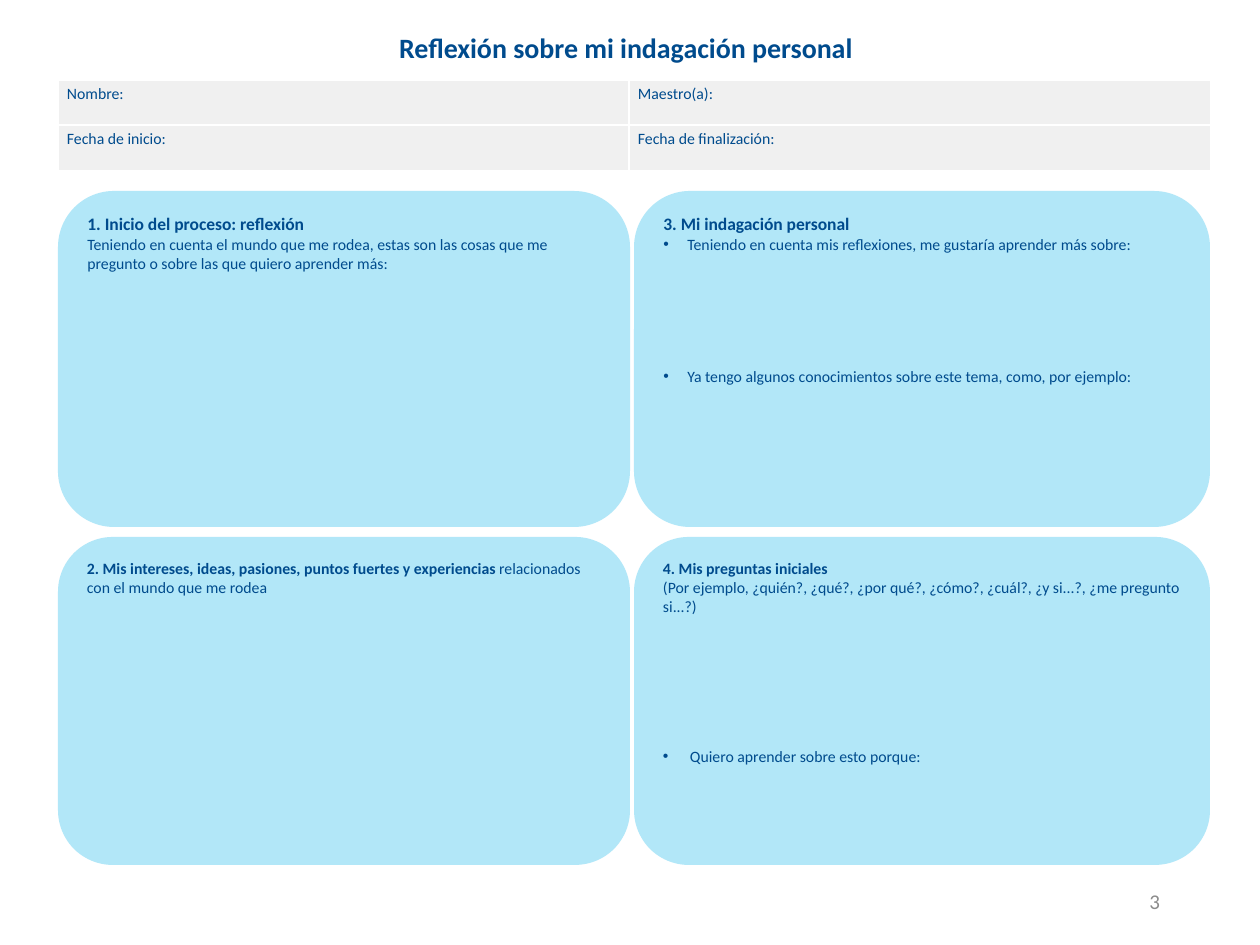
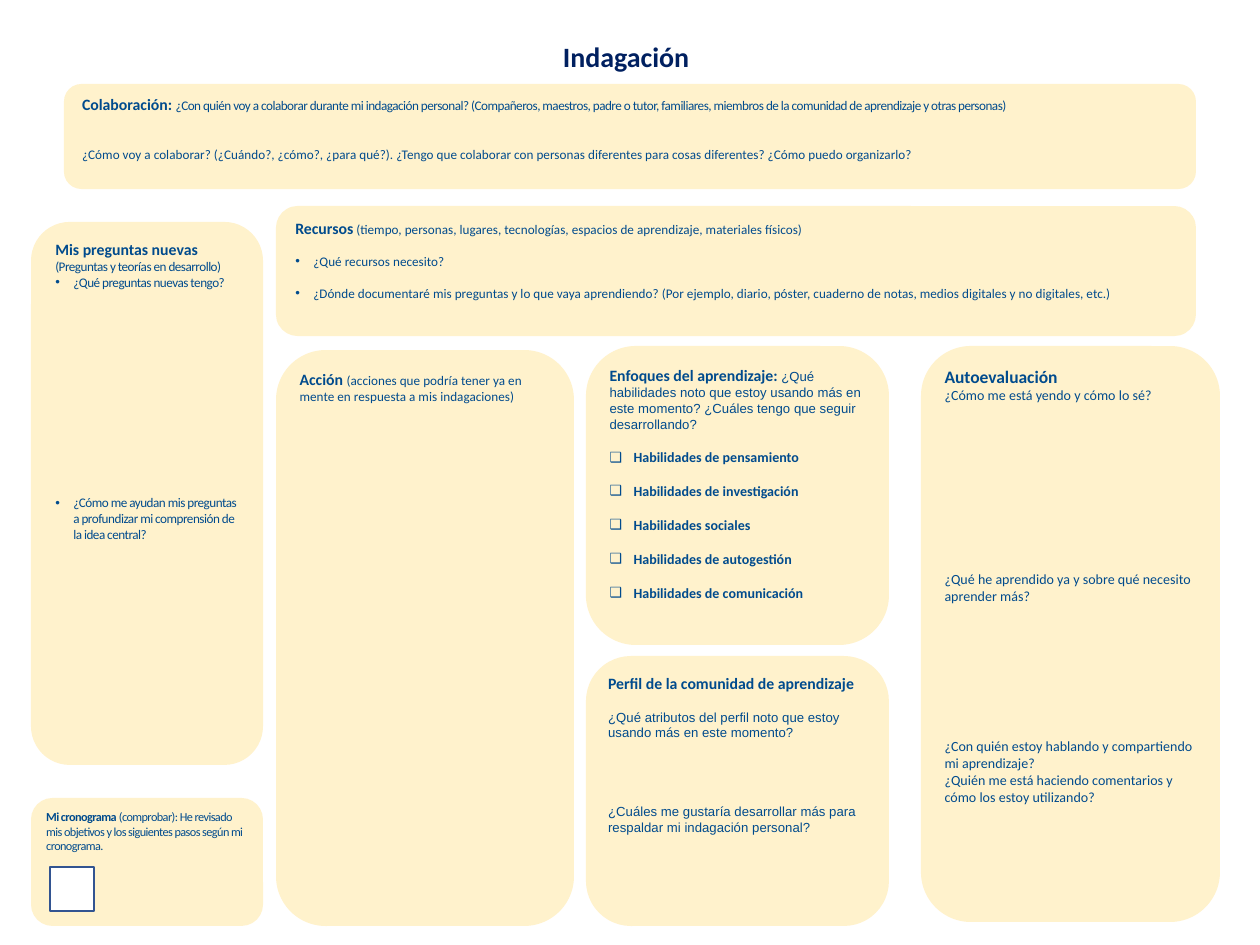
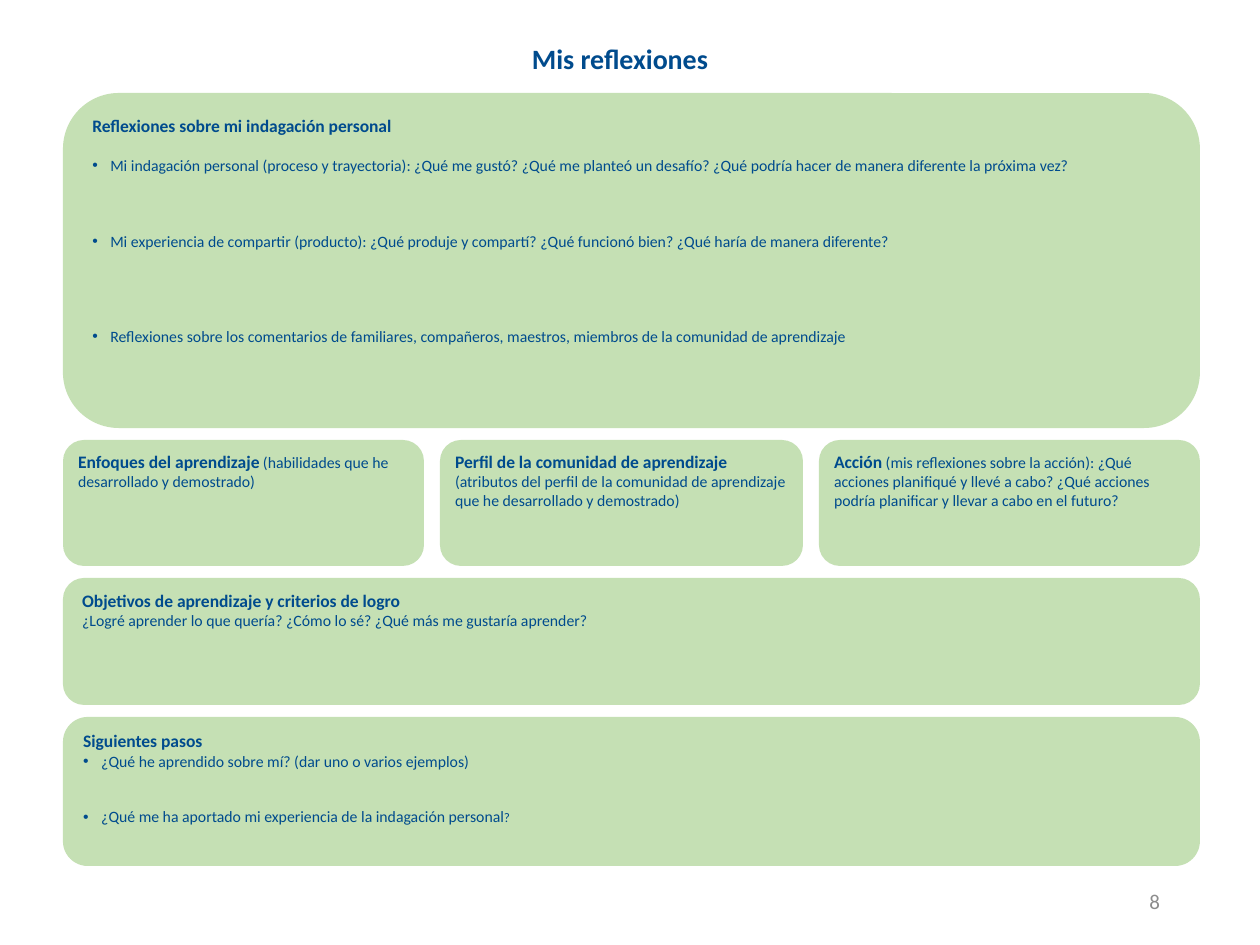
from lxml import etree
from pptx import Presentation
from pptx.dml.color import RGBColor
from pptx.enum.shapes import MSO_SHAPE
from pptx.enum.text import MSO_ANCHOR, PP_ALIGN
from pptx.oxml.ns import qn
from pptx.util import Emu, Pt

ROUNDED, SQUARE = MSO_SHAPE.ROUNDED_RECTANGLE, MSO_SHAPE.RECTANGLE
TOP, MIDDLE = MSO_ANCHOR.TOP, MSO_ANCHOR.MIDDLE
LEFT, CENTER, RIGHT = PP_ALIGN.LEFT, PP_ALIGN.CENTER, PP_ALIGN.RIGHT

BLUE = RGBColor(0x00, 0x4B, 0x8D)
NAVY = RGBColor(0x00, 0x20, 0x60)
SKY = RGBColor(0xB2, 0xE7, 0xF8)
CREAM = RGBColor(0xFF, 0xF2, 0xCC)
GREEN = RGBColor(0xC5, 0xE0, 0xB4)
PALE_GRAY = RGBColor(0xF0, 0xF0, 0xF0)
GRAY = RGBColor(0x8C, 0x8C, 0x8C)
WHITE = RGBColor(0xFF, 0xFF, 0xFF)
CHECK_LINE = RGBColor(0x32, 0x54, 0x91)

PX = 914400 / 126
WIDE = (13, 6)
NARROW = (9, 5)
DOT, CHECK = "•", "❑"
TIGHT = -0.3


def px(n):
    return Emu(round(n * PX))


def add_text(tf, text, join=False, size=9, bold=False, color=BLUE, font="Calibri",
             spacing=0, gap=0, bullet=None, indent=18, align=LEFT):
    if join or not tf.text:
        p = tf.paragraphs[-1]
    else:
        p = tf.add_paragraph()
    if not join:
        p.alignment = align
        p.space_before = px(gap)
        if bullet:
            pPr = p._p.get_or_add_pPr()
            pPr.set("marL", str(px(indent)))
            pPr.set("indent", str(-px(indent)))
            etree.SubElement(pPr, qn("a:buFont")).set("typeface", "Arial")
            etree.SubElement(pPr, qn("a:buChar")).set("char", bullet)
    r = p.add_run()
    r.text = text
    r.font.size = Pt(size)
    r.font.bold = bold
    r.font.name = font
    r.font.color.rgb = color
    if spacing:
        r._r.get_or_add_rPr().set("spc", str(round(spacing * 100)))


def set_frame(tf, inset=WIDE, anchor=TOP):
    tf.word_wrap = True
    tf.vertical_anchor = anchor
    tf.margin_left = tf.margin_right = px(inset[0])
    tf.margin_top = tf.margin_bottom = px(inset[1])
    return tf


def add_box(slide, box, fill, kind=ROUNDED, line=None):
    sp = slide.shapes.add_shape(kind, *map(px, box))
    sp.shadow.inherit = False
    sp.fill.solid()
    sp.fill.fore_color.rgb = fill
    if line:
        sp.line.color.rgb = line
        sp.line.width = Pt(1)
    else:
        sp.line.fill.background()
    return sp


def panel(slide, box, fill, heading, size=10, inset=WIDE, spacing=0):
    tf = set_frame(add_box(slide, box, fill).text_frame, inset)
    add_text(tf, heading, size=size, bold=True, spacing=spacing)
    return tf


def label(slide, box, text, anchor=TOP, **fmt):
    sp = slide.shapes.add_textbox(*map(px, box))
    add_text(set_frame(sp.text_frame, anchor=anchor), text, **fmt)


def title(slide, text, top, width=1252, color=BLUE):
    label(slide, (0, top, width, 47), text, size=16, bold=True, color=color, align=CENTER)


def page_number(slide, number):
    label(slide, (890, 876, 283, 50), number, MIDDLE, size=12, color=GRAY, align=RIGHT)


def tracks(start, sizes, gap):
    return [(start + sum(sizes[:i]) + gap * i, size) for i, size in enumerate(sizes)]


def white_borders(cell):
    tcPr = cell._tc.get_or_add_tcPr()
    for i, side in enumerate(("lnL", "lnR", "lnT", "lnB")):
        ln = etree.Element(qn(f"a:{side}"), w=str(Pt(1)))
        solid = etree.SubElement(ln, qn("a:solidFill"))
        etree.SubElement(solid, qn("a:srgbClr")).set("val", str(WHITE))
        tcPr.insert(i, ln)


def student_table(slide, left, top):
    rows = [("Nombre:", "Maestro(a):"), ("Fecha de inicio:", "Fecha de finalización:")]
    widths, heights = (571, 582), (45, 46)
    table = slide.shapes.add_table(2, 2, px(left), px(top), px(sum(widths)),
                                   px(sum(heights))).table
    table.first_row = table.horz_banding = False
    for i in range(2):
        table.columns[i].width = px(widths[i])
        table.rows[i].height = px(heights[i])
    for i, row in enumerate(rows):
        for j, text in enumerate(row):
            cell = table.cell(i, j)
            cell.fill.solid()
            cell.fill.fore_color.rgb = PALE_GRAY
            cell.margin_left = cell.margin_right = px(NARROW[0])
            cell.margin_top = cell.margin_bottom = px(NARROW[1])
            add_text(cell.text_frame, text)
            white_borders(cell)


def starting_slide(slide):
    page_number(slide, "3")
    title(slide, "Reflexión sobre mi indagación personal", 25)
    student_table(slide, 58, 80)
    columns = tracks(58, (572, 576), 4)
    rows = tracks(191, (336, 328), 10)
    start, inquiry, interests, questions = [(x, y, w, h) for y, h in rows for x, w in columns]

    tf = panel(slide, start, SKY, "1. Inicio del proceso: reflexión")
    add_text(tf, "Teniendo en cuenta el mundo que me rodea, estas son las cosas que me "
                 "pregunto o sobre las que quiero aprender más:")

    tf = panel(slide, interests, SKY,
               "2. Mis intereses, ideas, pasiones, puntos fuertes y experiencias", 9)
    add_text(tf, " relacionados con el mundo que me rodea", join=True)

    tf = panel(slide, inquiry, SKY, "3. Mi indagación personal")
    add_text(tf, "Teniendo en cuenta mis reflexiones, me gustaría aprender más sobre:",
             bullet=DOT, indent=24)
    add_text(tf, "Ya tengo algunos conocimientos sobre este tema, como, por ejemplo:",
             bullet=DOT, indent=24, gap=113)

    tf = panel(slide, questions, SKY, "4. Mis preguntas iniciales", 9)
    add_text(tf, "(Por ejemplo, ¿quién?, ¿qué?, ¿por qué?, ¿cómo?, ¿cuál?, ¿y si...?, "
                 "¿me pregunto si...?)")
    add_text(tf, "Quiero aprender sobre esto porque:", bullet=DOT, indent=27, gap=131)


def collaboration(slide, box):
    tf = panel(slide, box, CREAM, "Colaboración: ", 9)
    add_text(tf, "¿Con quién voy a colaborar durante mi indagación personal? (Compañeros, "
                 "maestros, padre o tutor, familiares, miembros de la comunidad de "
                 "aprendizaje y otras personas)", join=True, size=7.5, spacing=TIGHT)
    add_text(tf, "¿Cómo voy a colaborar? (¿Cuándo?, ¿cómo?, ¿para qué?). ¿Tengo que "
                 "colaborar con personas diferentes para cosas diferentes? ¿Cómo puedo "
                 "organizarlo?", size=7.5, gap=32)


def new_questions(slide, box):
    tf = panel(slide, box, CREAM, "Mis preguntas nuevas", 9)
    fmt = dict(size=7.5, spacing=TIGHT)
    add_text(tf, "(Preguntas y teorías en desarrollo)", **fmt)
    add_text(tf, "¿Qué preguntas nuevas tengo?", bullet=DOT, **fmt)
    add_text(tf, "¿Cómo me ayudan mis preguntas a profundizar mi comprensión de la idea "
                 "central?", bullet=DOT, gap=205, **fmt)


def resources(slide, box):
    tf = panel(slide, box, CREAM, "Recursos", 9)
    add_text(tf, " (tiempo, personas, lugares, tecnologías, espacios de aprendizaje, "
                 "materiales físicos)", join=True, size=7.5)
    for text in ("¿Qué recursos necesito?",
                 "¿Dónde documentaré mis preguntas y lo que vaya aprendiendo? (Por ejemplo, "
                 "diario, póster, cuaderno de notas, medios digitales y no digitales, etc.)"):
        add_text(tf, text, size=7.5, bullet=DOT, gap=16)


def schedule(slide, box):
    tf = panel(slide, box, CREAM, "Mi cronograma", 7, NARROW, TIGHT)
    add_text(tf, " (comprobar): He revisado mis objetivos y los siguientes pasos según mi "
                 "cronograma.", join=True, size=7, spacing=TIGHT)
    x, y = box[:2]
    add_box(slide, (x + 19, y + 69, 44, 44), WHITE, SQUARE, CHECK_LINE)


def action(slide, box):
    tf = panel(slide, box, CREAM, "Acción ", 9, NARROW)
    add_text(tf, "(acciones que podría tener ya en mente en respuesta a mis indagaciones)",
             join=True, size=7.5)


def skills(slide, box):
    tf = panel(slide, box, CREAM, "Enfoques del aprendizaje: ", 9, NARROW)
    add_text(tf, "¿Qué habilidades noto que estoy usando más en este momento? ¿Cuáles "
                 "tengo que seguir desarrollando?", join=True, size=7.5, font="Arial")
    for skill in ("de pensamiento", "de investigación", "sociales", "de autogestión",
                  "de comunicación"):
        add_text(tf, f"Habilidades {skill}", size=8, bold=True, bullet=CHECK, indent=24,
                 gap=17)


def profile(slide, box):
    tf = panel(slide, box, CREAM, "Perfil de la comunidad de aprendizaje", 9, NARROW)
    add_text(tf, "¿Qué atributos del perfil noto que estoy usando más en este momento?",
             size=7.5, font="Arial", gap=16)
    add_text(tf, "¿Cuáles me gustaría desarrollar más para respaldar mi indagación personal?",
             size=7.5, font="Arial", gap=63)


def self_assessment(slide, box):
    tf = panel(slide, box, CREAM, "Autoevaluación", 10, NARROW)
    for text, gap in (("¿Cómo me está yendo y cómo lo sé?", 0),
                      ("¿Qué he aprendido ya y sobre qué necesito aprender más?", 167),
                      ("¿Con quién estoy hablando y compartiendo mi aprendizaje?", 134),
                      ("¿Quién me está haciendo comentarios y cómo los estoy utilizando?", 0)):
        add_text(tf, text, size=8, gap=gap)


def inquiry_slide(slide):
    title(slide, "Indagación", 34, color=NAVY)
    collaboration(slide, (64, 84, 1132, 105))
    new_questions(slide, (31, 222, 232, 543))
    resources(slide, (276, 206, 920, 130))
    schedule(slide, (31, 798, 232, 128))
    action(slide, (276, 350, 298, 576))
    skills(slide, (586, 346, 303, 299))
    profile(slide, (586, 656, 303, 270))
    self_assessment(slide, (921, 346, 299, 576))


def reflections_slide(slide):
    page_number(slide, "8")
    title(slide, "Mis reflexiones", 36, width=1240)
    left, width = 63, 1137
    inquiry, summary, goals, steps = tracks(93, (335, 126, 127, 149), 12)

    tf = panel(slide, (left, inquiry[0], width, inquiry[1]), GREEN,
               "Reflexiones sobre mi indagación personal")
    for text, gap in (("Mi indagación personal (proceso y trayectoria): ¿Qué me gustó? ¿Qué me "
                       "planteó un desafío? ¿Qué podría hacer de manera diferente la próxima "
                       "vez?", 19),
                      ("Mi experiencia de compartir (producto): ¿Qué produje y compartí? ¿Qué "
                       "funcionó bien? ¿Qué haría de manera diferente?", 57),
                      ("Reflexiones sobre los comentarios de familiares, compañeros, maestros, "
                       "miembros de la comunidad de aprendizaje", 76)):
        add_text(tf, text, bullet=DOT, gap=gap)

    topics = (("Enfoques del aprendizaje", " (habilidades que he desarrollado y demostrado)"),
              ("Perfil de la comunidad de aprendizaje",
               " (atributos del perfil de la comunidad de aprendizaje que he desarrollado y "
               "demostrado)"),
              ("Acción", " (mis reflexiones sobre la acción): ¿Qué acciones planifiqué y llevé "
                         "a cabo? ¿Qué acciones podría planificar y llevar a cabo en el futuro?"))
    for (x, w), (heading, text) in zip(tracks(left, (361, 363, 381), 16), topics):
        tf = panel(slide, (x, summary[0], w, summary[1]), GREEN, heading, inset=NARROW)
        add_text(tf, text, join=True)

    tf = panel(slide, (left, goals[0], width, goals[1]), GREEN,
               "Objetivos de aprendizaje y criterios de logro")
    add_text(tf, "¿Logré aprender lo que quería? ¿Cómo lo sé? ¿Qué más me gustaría aprender?")

    tf = panel(slide, (left, steps[0], width, steps[1]), GREEN, "Siguientes pasos")
    add_text(tf, "¿Qué he aprendido sobre mí? (dar uno o varios ejemplos)", bullet=DOT)
    add_text(tf, "¿Qué me ha aportado mi experiencia de la indagación personal", bullet=DOT,
             gap=37)
    add_text(tf, "?", join=True, size=7.5)


def main():
    prs = Presentation()
    prs.slide_width, prs.slide_height = px(1260), px(945)
    for build in (starting_slide, inquiry_slide, reflections_slide):
        build(prs.slides.add_slide(prs.slide_layouts[6]))
    prs.save("out.pptx")


if __name__ == "__main__":
    main()
